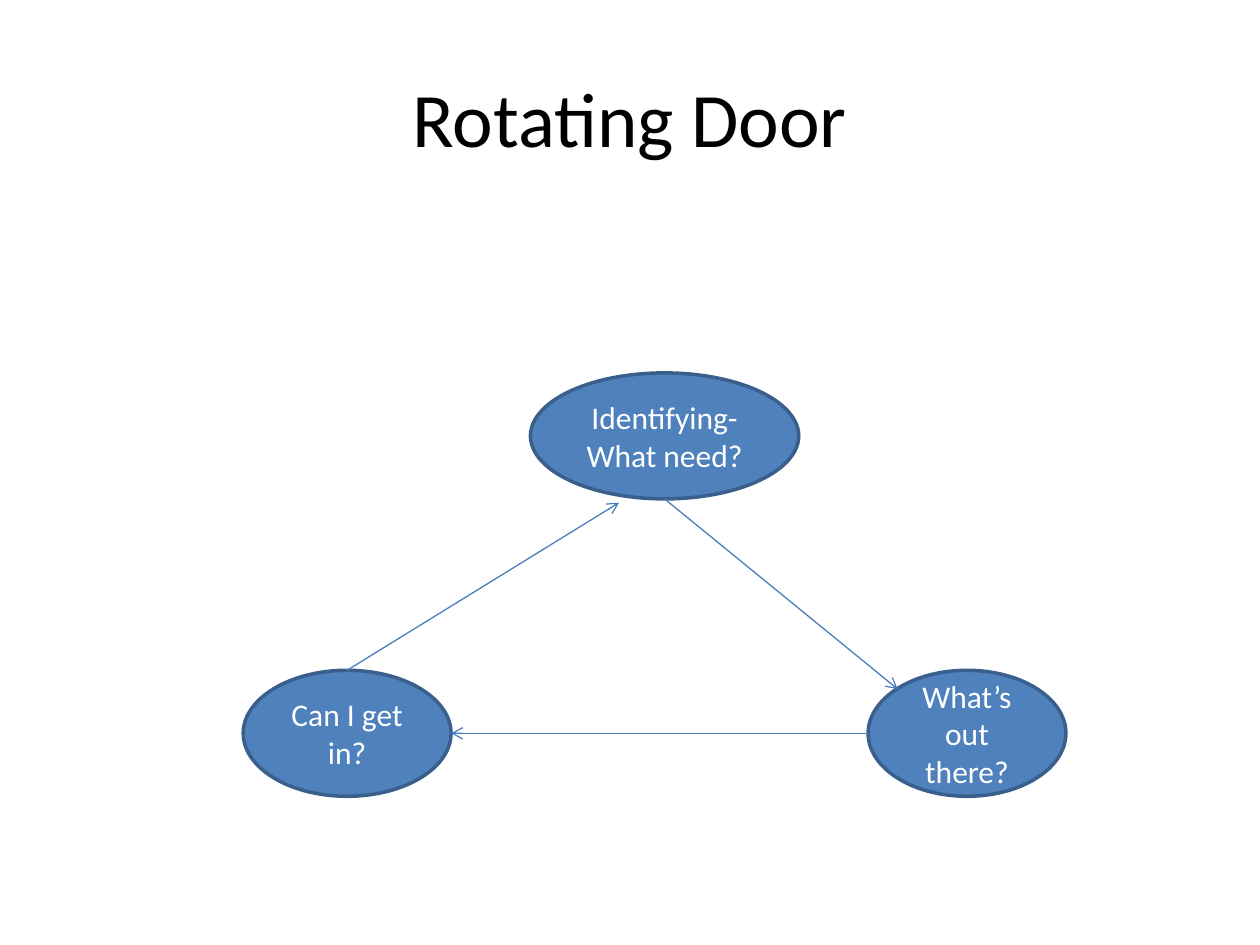
from dataclasses import dataclass

from lxml.etree import SubElement
from pptx import Presentation
from pptx.dml.color import RGBColor
from pptx.enum.shapes import MSO_CONNECTOR, MSO_SHAPE
from pptx.enum.text import MSO_ANCHOR, PP_ALIGN
from pptx.oxml.ns import qn
from pptx.util import Inches, Pt


@dataclass(frozen=True)
class Theme:
    font: str = "Calibri"
    title_size: float = 44
    node_size: float = 18
    title_color: str = "000000"
    node_text: str = "FFFFFF"
    node_fill: str = "4F81BD"
    node_line: str = "3A5F8C"
    arrow: str = "4B7EBC"
    node_line_width: float = 2
    arrow_width: float = 0.75


THEME = Theme()

# name: (text, left, top, width, height), relative to the diagram box
NODES = {
    "need": ("Identifying- What need?", 2.28, 0, 2.13, 1),
    "options": ("What’s out there?", 4.96, 2.36, 1.57, 1),
    "entry": ("Can I get in?", 0, 2.36, 1.65, 1),
}

# Points on a node as fractions of its width and height
TOP, BOTTOM, LEFT, RIGHT = (0.5, 0), (0.5, 1), (0, 0.5), (1, 0.5)
UPPER_LEFT = (0.15, 0.15)
BELOW_LEFT = (0.33, 1.03)

ARROWS = [
    ("need", BOTTOM, "options", UPPER_LEFT),
    ("options", LEFT, "entry", RIGHT),
    ("entry", TOP, "need", BELOW_LEFT),
]


def write_text(shape, text, *, size, color):
    frame = shape.text_frame
    frame.word_wrap = True
    frame.vertical_anchor = MSO_ANCHOR.MIDDLE
    paragraph = frame.paragraphs[0]
    paragraph.alignment = PP_ALIGN.CENTER
    run = paragraph.add_run()
    run.text = text
    run.font.name = THEME.font
    run.font.size = Pt(size)
    run.font.color.rgb = RGBColor.from_string(color)


def place_title(slide, text, left, top, width, height):
    title = slide.shapes.title
    title.left, title.top = Inches(left), Inches(top)
    title.width, title.height = Inches(width), Inches(height)
    write_text(title, text, size=THEME.title_size, color=THEME.title_color)


def add_node(slide, text, left, top, width, height):
    node = slide.shapes.add_shape(
        MSO_SHAPE.OVAL, Inches(left), Inches(top), Inches(width), Inches(height)
    )
    node.shadow.inherit = False
    node.fill.solid()
    node.fill.fore_color.rgb = RGBColor.from_string(THEME.node_fill)
    node.line.color.rgb = RGBColor.from_string(THEME.node_line)
    node.line.width = Pt(THEME.node_line_width)
    write_text(node, text, size=THEME.node_size, color=THEME.node_text)
    return node


def point_on(node, fractions):
    across, down = fractions
    return (
        round(node.left + across * node.width),
        round(node.top + down * node.height),
    )


def add_arrow(slide, start, end):
    arrow = slide.shapes.add_connector(MSO_CONNECTOR.STRAIGHT, *start, *end)
    arrow.line.color.rgb = RGBColor.from_string(THEME.arrow)
    arrow.line.width = Pt(THEME.arrow_width)
    properties = arrow.element.spPr
    SubElement(properties.find(qn("a:ln")), qn("a:tailEnd"), type="arrow")
    SubElement(properties, qn("a:effectLst"))


def add_cycle(slide, left, top):
    """Draw the nodes and the arrows that join them, from the given corner."""
    nodes = {
        name: add_node(slide, text, left + x, top + y, width, height)
        for name, (text, x, y, width, height) in NODES.items()
    }
    for source, source_point, target, target_point in ARROWS:
        add_arrow(
            slide,
            point_on(nodes[source], source_point),
            point_on(nodes[target], target_point),
        )


def main():
    presentation = Presentation()
    presentation.slide_width = Inches(10)
    presentation.slide_height = Inches(7.5)
    title_only = presentation.slide_layouts.get_by_name("Title Only")
    slide = presentation.slides.add_slide(title_only)
    place_title(slide, "Rotating Door", 0.5, 0.3, 9, 1.25)
    add_cycle(slide, 1.93, 2.96)
    presentation.save("out.pptx")


if __name__ == "__main__":
    main()
